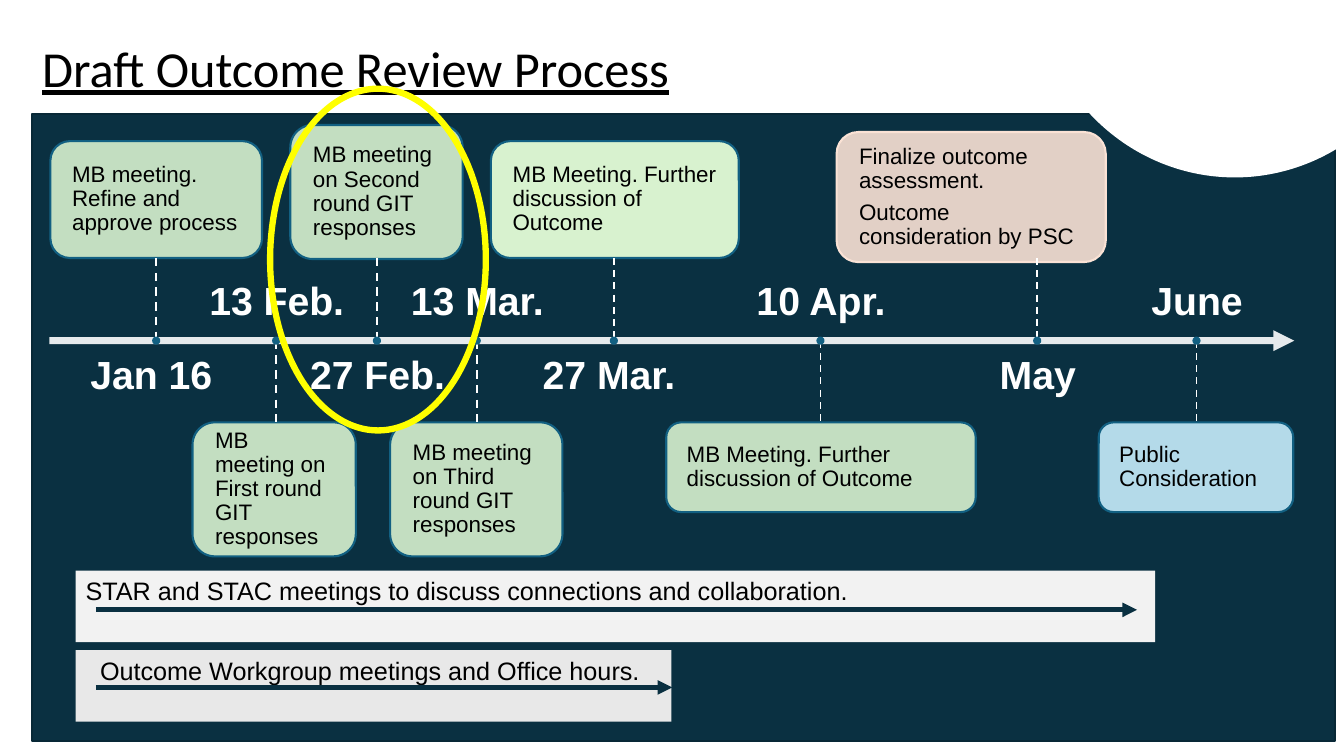
from lxml import etree
from pptx import Presentation
from pptx.dml.color import RGBColor
from pptx.enum.dml import MSO_LINE
from pptx.enum.shapes import MSO_CONNECTOR, MSO_SHAPE
from pptx.enum.text import MSO_ANCHOR, PP_ALIGN
from pptx.oxml.ns import qn
from pptx.util import Inches, Pt

RECT, ROUND, OVAL = MSO_SHAPE.RECTANGLE, MSO_SHAPE.ROUNDED_RECTANGLE, MSO_SHAPE.OVAL
LINE, DASH = MSO_CONNECTOR.STRAIGHT, MSO_LINE.DASH
TOP, MID, LOW = MSO_ANCHOR.TOP, MSO_ANCHOR.MIDDLE, MSO_ANCHOR.BOTTOM
LEFT, MIDST = PP_ALIGN.LEFT, PP_ALIGN.CENTER

THEME = {
    "navy": "0A3041", "edge": "082836", "teal": "126082", "white": "FFFFFF",
    "black": "000000", "green": "D8F2CF", "peach": "FAE2D5", "sky": "C7EDFC",
    "pale": "F2F2F2", "grey": "E8E8E8", "ring": "FFFF00",
    "head": {"name": "Calibri", "size": Pt(36), "underline": True},
    "date": {"name": "Arial", "size": Pt(28), "bold": True},
    "card": {"name": "Arial", "size": Pt(16)},
    "bar": {"name": "Arial", "size": Pt(18)},
}

# Grid: square cells, a tenth of an inch each
CELL = Inches(0.1)
COLS, ROWS = 133.33, 75

deck = Presentation()
deck.slide_width, deck.slide_height = int(COLS * CELL), ROWS * CELL
slide = deck.slides.add_slide(deck.slide_layouts[6])
shapes = slide.shapes


def draw(kind, box, fill=None, line=None, width=1.5, alpha=100):
    """Add a preset shape, or a text box when kind is None."""
    area = [round(n * CELL) for n in box]
    if kind is None:
        return shapes.add_textbox(*area)
    item = shapes.add_shape(kind, *area)
    item.shadow.inherit = False
    if fill:
        item.fill.solid()
        item.fill.fore_color.rgb = RGBColor.from_string(THEME[fill])
        if alpha < 100:
            tone = item.fill._xPr.find(".//" + qn("a:srgbClr"))
            etree.SubElement(tone, qn("a:alpha"), val=str(alpha * 1000))
    else:
        item.fill.background()
    if line:
        item.line.color.rgb = RGBColor.from_string(THEME[line])
        item.line.width = Pt(width)
    else:
        item.line.fill.background()
    return item


def write(item, paras, style, ink="black", pad=(1, 0.5), anchor=MID, align=LEFT, space=0.9):
    frame = item.text_frame
    side, rise = (round(n * CELL) for n in pad)
    form = {"word_wrap": True, "vertical_anchor": anchor, "margin_left": side,
            "margin_right": side, "margin_top": rise, "margin_bottom": rise}
    for key, val in form.items():
        setattr(frame, key, val)
    for i, words in enumerate(paras):
        para = frame.add_paragraph() if i else frame.paragraphs[0]
        para.alignment, para.line_spacing = align, space
        para.space_before = Pt(5.6 if i else 0)
        run = para.add_run()
        run.text = words
        run.font.color.rgb = RGBColor.from_string(THEME[ink])
        for key, val in THEME[style].items():
            setattr(run.font, key, val)


# Panel and title
draw(RECT, (3.2, 11.3, 129.2, 62.2), "navy", "edge")
write(draw(None, (3.2, 3.4, 92.4, 7.3)), ["Draft Outcome Review Process"], "head")

# Events: date, column on the axis, card box, fill, line, alpha, dash width, words
AXIS, ROOF, FLOOR = 33.8, 25.6, 41.9
events = [
    ("Jan 16 ", 15.5, (5, 14, 21, 11.6), "green", "teal", 90, 1.5,
     ["MB meeting. Refine and approve process"]),
    ("13 Feb.", 27.4, (19.1, FLOOR, 16.2, 13.3), "green", "teal", 90, 1.5,
     ["MB meeting on First round GIT responses"]),
    ("27 Feb.", 37.4, (28.8, 12.4, 17.1, 13.3), "green", "teal", 90, 1.5,
     ["MB meeting on Second round GIT responses"]),
    ("13 Mar.", 47.3, (38.7, FLOOR, 17.1, 13.3), "green", "teal", 90, 1.5,
     ["MB meeting on Third round GIT responses"]),
    ("27 Mar. ", 60.9, (48.7, 14, 24.6, 11.6), "green", "teal", 100, 1.25,
     ["MB Meeting. Further discussion of Outcome"]),
    ("10 Apr.", 81.4, (66.1, FLOOR, 30.7, 8.9), "green", "teal", 90, 1.25,
     ["MB Meeting. Further discussion of Outcome"]),
    ("May", 102.9, (83, 13.1, 26.7, 12.9), "peach", "peach", 90, 1.25,
     ["Finalize outcome assessment.", "Outcome consideration by PSC"]),
    ("June", 118.7, (109, FLOOR, 19.3, 8.9), "sky", "teal", 90, 1.25,
     ["Public Consideration"]),
]

# Cards sit on alternate sides of the axis, each date opposite its card
lines = [(4.9, AXIS, 128.4, AXIS, "white", 5, 90, False)]
for i, (date, col, box, fill, edge, alpha, width, words) in enumerate(events):
    above = i % 2 == 0
    write(draw(ROUND, box, fill, edge, alpha=alpha), words, "card", pad=(1.6, 1.6))
    label = draw(None, (col - 7.5, 35.3 if above else 27.3, 15.1, 4.8))
    write(label, [date], "date", "white", (0, 0), TOP if above else LOW, MIDST)
    ends = (ROOF, AXIS) if above else (AXIS, FLOOR)
    lines.append((col, ends[0], col, ends[1], "white", width, 100, True))

# Bars for the running meetings
bars = [
    (56.6, 107.1, "pale", LEFT, 60.5, 112.8,
     "STAR and STAC meetings to discuss connections and collaboration."),
    (64.5, 59.1, "grey", MIDST, 68.2, 66.7,
     "Outcome Workgroup meetings and Office hours. "),
]
for top, wide, fill, align, row, tip, words in bars:
    bar = draw(RECT, (7.5, top, wide, 7.1), fill)
    write(bar, [words], "bar", anchor=TOP, align=align, space=1.0)
    lines.append((9.5, row, tip, row, "navy", 3.5, 100, False))

# Axis, dashed stems and bar arrows
for x1, y1, x2, y2, ink, width, alpha, stem in lines:
    link = shapes.add_connector(LINE, *(round(n * CELL) for n in (x1, y1, x2, y2)))
    link.line.color.rgb = RGBColor.from_string(THEME[ink])
    link.line.width = Pt(width)
    props = link._element.spPr
    etree.SubElement(props, qn("a:effectLst"))
    if alpha < 100:
        tone = props.find(".//" + qn("a:srgbClr"))
        etree.SubElement(tone, qn("a:alpha"), val=str(alpha * 1000))
    if stem:
        link.line.dash_style = DASH
    else:
        etree.SubElement(props.find(qn("a:ln")), qn("a:tailEnd"), type="triangle")

# Dots on the axis
for event in events:
    draw(OVAL, (event[1] - 0.3, AXIS - 0.3, 0.6, 0.6), "teal", "teal")

# Corner cut and highlight ring
draw(OVAL, (102.5, -23.8, 40, 41.4), "white")
draw(OVAL, (26.8, 8.8, 21.4, 33.9), None, "ring", 4.5)

deck.save("out.pptx")
